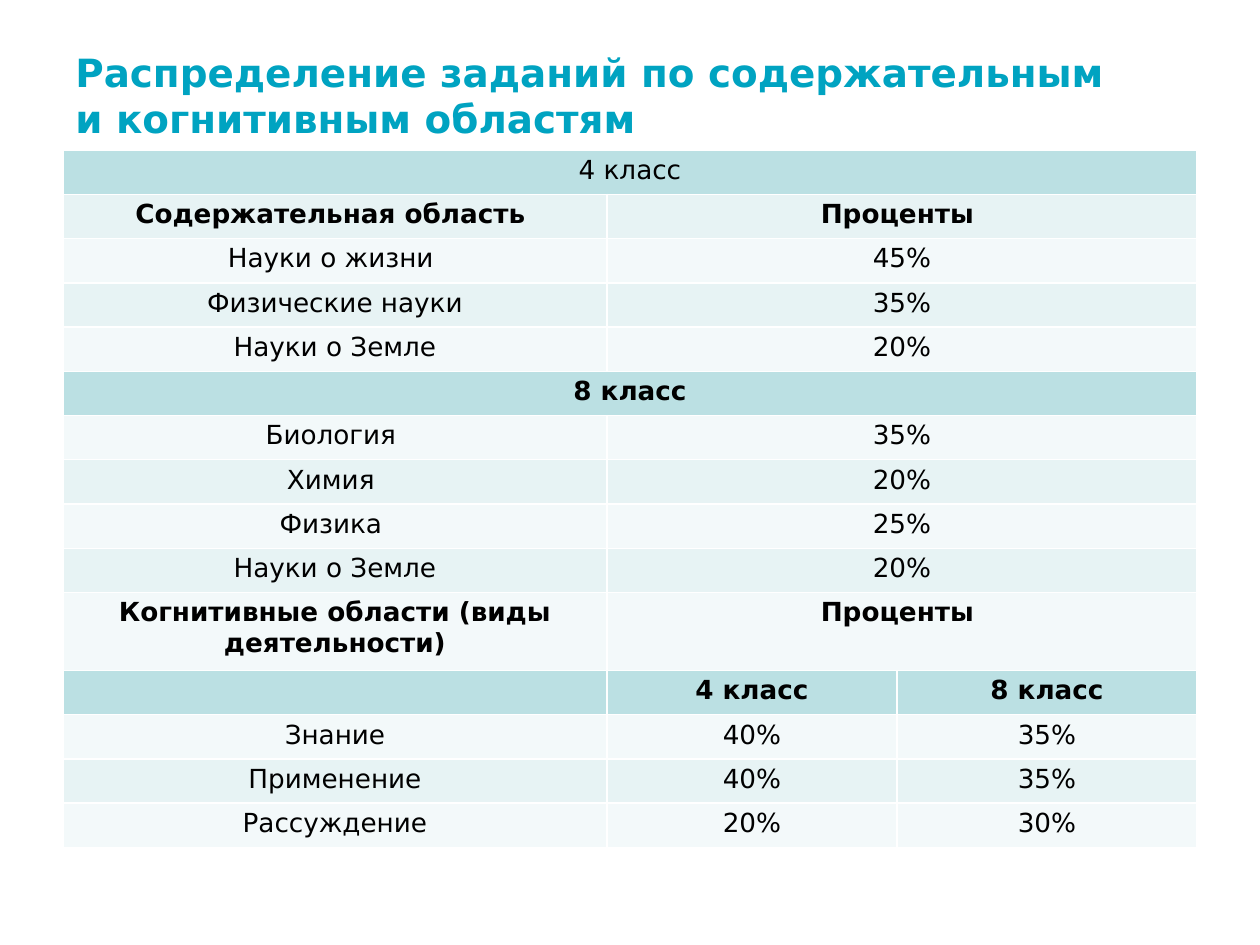
from lxml.etree import SubElement
from pptx import Presentation
from pptx.dml.color import RGBColor
from pptx.enum.text import MSO_ANCHOR, PP_ALIGN
from pptx.oxml.ns import qn
from pptx.util import Emu, Pt

FONT = "DejaVu Sans"
HEADER, BAND_ODD, BAND_EVEN = "BBE0E3", "E7F3F4", "F3F9FA"
COLUMN_WIDTHS = [544, 290, 300]
TALL_ROW, TALL_HEIGHT = 10, 78
HEADER_ROWS = {0, 5, 11}
BOLD_ROWS = {1, 5, 10, 11}
ROWS = [
    ["4 класс"],
    ["Содержательная область ", "Проценты "],
    ["Науки о жизни ", "45%"],
    ["Физические науки", "35%"],
    ["Науки о Земле", "20%"],
    ["8 класс"],
    ["Биология ", "35%"],
    ["Химия ", "20%"],
    ["Физика ", "25%"],
    ["Науки о Земле", "20%"],
    ["Когнитивные области (виды деятельности)", "Проценты "],
    ["", "4 класс", "8 класс"],
    ["Знание", "40%", "35%"],
    ["Применение", "40%", "35%"],
    ["Рассуждение", "20%", "30%"],
]


def px(length):
    return Emu(round(length * 914400 / 126))


def color(value):
    return RGBColor.from_string(value)


def style_font(font, size, value, bold):
    font.name = FONT
    font.size = Pt(size)
    font.bold = bold
    font.color.rgb = color(value)


def add_title(page, left, top, width, height):
    box = page.shapes.add_textbox(px(left), px(top), px(width), px(height))
    frame = box.text_frame
    frame.word_wrap = True
    frame.vertical_anchor = MSO_ANCHOR.MIDDLE
    para = frame.paragraphs[0]
    para.text = "Распределение заданий по содержательным \nи когнитивным областям"
    for span in para.runs:
        style_font(span.font, 22.2, "00A3C1", True)


def add_borders(cell):
    properties = cell._tc.get_or_add_tcPr()
    for side in ("a:lnL", "a:lnR", "a:lnT", "a:lnB"):
        line = SubElement(properties, qn(side), w=str(Pt(1)))
        fill = SubElement(line, qn("a:solidFill"))
        SubElement(fill, qn("a:srgbClr"), val="FFFFFF")


def style_cell(cell, fill):
    cell.margin_left = cell.margin_right = px(10)
    cell.margin_top = cell.margin_bottom = px(5)
    add_borders(cell)
    cell.fill.solid()
    cell.fill.fore_color.rgb = color(fill)


def fill_cell(cell, text, bold):
    para = cell.text_frame.paragraphs[0]
    para.text = text
    para.alignment = PP_ALIGN.CENTER
    style_font(para.font, 15, "000000", bold)
    for span in para.runs:
        style_font(span.font, 15, "000000", bold)


def row_fill(index):
    if index in HEADER_ROWS:
        return HEADER
    return BAND_ODD if index % 2 else BAND_EVEN


def add_distribution(page, left, top, width, height):
    column_count = len(COLUMN_WIDTHS)
    frame = page.shapes.add_table(
        len(ROWS), column_count, px(left), px(top), px(width), px(height)
    )
    table = frame.table
    table.first_row = False
    table.horz_banding = False
    for column, column_width in zip(table.columns, COLUMN_WIDTHS):
        column.width = px(column_width)
    row_height = (height - TALL_HEIGHT) / (len(ROWS) - 1)
    for index, texts in enumerate(ROWS):
        table.rows[index].height = px(TALL_HEIGHT if index == TALL_ROW else row_height)
        for column in range(column_count):
            style_cell(table.cell(index, column), row_fill(index))
        for column, text in enumerate(texts):
            fill_cell(table.cell(index, column), text, index in BOLD_ROWS)
        if len(texts) < column_count:
            last_text = table.cell(index, len(texts) - 1)
            last_text.merge(table.cell(index, column_count - 1))


def main():
    deck = Presentation()
    deck.slide_width, deck.slide_height = px(1260), px(945)
    page = deck.slides.add_slide(deck.slide_layouts[6])
    add_title(page, 63, 39, 1134, 112)
    add_distribution(page, 63, 150, sum(COLUMN_WIDTHS), 698)
    deck.save("out.pptx")


if __name__ == "__main__":
    main()
